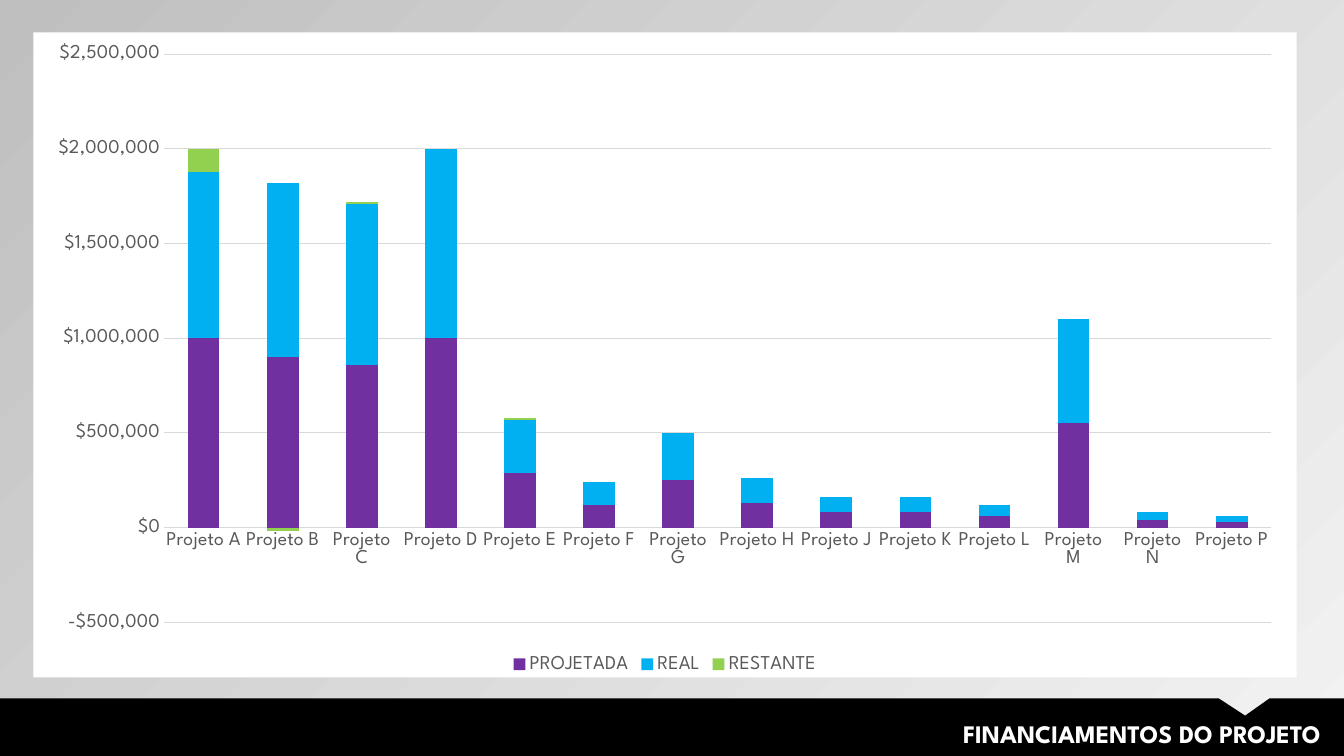
"""Build a slide with a stacked column chart of project funding."""
from dataclasses import dataclass

from lxml import etree
from pptx import Presentation
from pptx.chart.data import CategoryChartData
from pptx.dml.color import RGBColor
from pptx.enum.chart import XL_CHART_TYPE, XL_LEGEND_POSITION, XL_TICK_MARK
from pptx.enum.text import MSO_AUTO_SIZE, PP_ALIGN
from pptx.oxml import parse_xml
from pptx.oxml.ns import nsdecls, qn
from pptx.util import Inches, Pt

STACKED = XL_CHART_TYPE.COLUMN_STACKED
LEGEND_BOTTOM = XL_LEGEND_POSITION.BOTTOM
NO_TICK = XL_TICK_MARK.NONE
FIT_SHAPE = MSO_AUTO_SIZE.SHAPE_TO_FIT_TEXT
ALIGN_RIGHT = PP_ALIGN.RIGHT

BANNER_POINTS = [(0, 6.93), (12.09, 6.93), (12.35, 7.1), (12.59, 6.93),
                 (13.33, 6.93), (13.33, 7.5), (0, 7.5)]
PROJECTS = [f"Projeto {letter}" for letter in "ABCDEFGHJKLMNP"]
SMALL_PROJECTS = [120000, 250000, 130000, 80000, 80000, 60000, 550000, 40000, 30000]
FUNDING = {
    "PROJETADA": [1000000, 900000, 860000, 1000000, 290000] + SMALL_PROJECTS,
    "REAL": [880000, 920000, 850000, 1000000, 280000] + SMALL_PROJECTS,
    "RESTANTE": [120000, -20000, 10000, 0, 10000] + [0] * len(SMALL_PROJECTS),
}


@dataclass(frozen=True)
class Theme:
    """Colours, font and type sizes of the slide."""

    font: str = "League Spartan"
    title_size: int = 18
    chart_size: int = 14
    line_width: float = 0.75
    background: tuple = ("F2F2F2", "BFBFBF")
    banner: str = "000000"
    title: str = "FFFFFF"
    panel: str = "FFFFFF"
    label: str = "595959"
    line: str = "D9D9D9"
    series: tuple = ("7030A0", "00B0F0", "92D050")


def format_font(font, name, size, color, bold=False):
    """Apply a typeface, size, colour and weight to a font."""
    font.name = name
    font.size = Pt(size)
    font.bold = bold
    font.color.rgb = RGBColor.from_string(color)


def write_text(paragraph, text, align, **font_format):
    """Write one formatted run into a paragraph."""
    paragraph.alignment = align
    run = paragraph.add_run()
    run.text = text
    format_font(run.font, **font_format)


class SlideBuilder:
    """Draw themed elements on one slide."""

    def __init__(self, slide, theme):
        """Keep the slide and its theme."""
        self.slide = slide
        self.theme = theme

    def add_background(self):
        """Fill the background with a diagonal gradient."""
        fill = self.slide.background.fill
        fill.gradient()
        fill.gradient_angle = 135
        for stop, color, position in zip(fill.gradient_stops, self.theme.background, (0, 1)):
            stop.color.rgb = RGBColor.from_string(color)
            stop.position = position

    def add_banner(self, points):
        """Draw the notched band along the bottom."""
        corners = [(Inches(x), Inches(y)) for x, y in points]
        outline = self.slide.shapes.build_freeform(*corners[0])
        outline.add_line_segments(corners[1:], close=True)
        shape = outline.convert_to_shape()
        shape.shadow.inherit = False
        shape.fill.solid()
        shape.fill.fore_color.rgb = RGBColor.from_string(self.theme.banner)
        shape.line.fill.background()

    def add_title(self, text, left, top, width, height):
        """Place the right-aligned title."""
        box = self.slide.shapes.add_textbox(
            Inches(left), Inches(top), Inches(width), Inches(height))
        frame = box.text_frame
        frame.word_wrap = True
        frame.auto_size = FIT_SHAPE
        write_text(frame.paragraphs[0], text, ALIGN_RIGHT, name=self.theme.font,
                   size=self.theme.title_size, color=self.theme.title, bold=True)

    def add_funding_chart(self, categories, funding, left, top, width, height):
        """Place the stacked column chart on its white panel."""
        data = CategoryChartData(number_format='"$"#,##0')
        data.categories = categories
        for name, values in funding.items():
            data.add_series(name, values)
        chart = self.slide.shapes.add_chart(
            STACKED, Inches(left), Inches(top), Inches(width), Inches(height), data).chart
        self.format_label(chart.font)
        self.fill_panel(chart)
        chart.has_title = False
        chart.has_legend = True
        chart.legend.position = LEGEND_BOTTOM
        chart.legend.include_in_layout = False
        self.format_label(chart.legend.font)
        self.format_axes(chart)
        plot = chart.plots[0]
        plot.gap_width = 150
        plot.overlap = 100
        plot.vary_by_categories = False
        for series, color in zip(plot.series, self.theme.series):
            series.invert_if_negative = False
            series.format.fill.solid()
            series.format.fill.fore_color.rgb = RGBColor.from_string(color)

    def format_axes(self, chart):
        """Style both axes, the scale and the gridlines."""
        category_axis, value_axis = chart.category_axis, chart.value_axis
        for axis in (category_axis, value_axis):
            axis.major_tick_mark = NO_TICK
            axis.minor_tick_mark = NO_TICK
            self.format_label(axis.tick_labels.font)
        value_axis.minimum_scale = -500000
        value_axis.maximum_scale = 2500000
        value_axis.major_unit = 500000
        value_axis.tick_labels.number_format = '"$"#,##0'
        value_axis.tick_labels.number_format_is_linked = False
        value_axis.format.line.fill.background()
        value_axis.has_major_gridlines = True
        for line in (category_axis.format.line, value_axis.major_gridlines.format.line):
            line.color.rgb = RGBColor.from_string(self.theme.line)
            line.width = Pt(self.theme.line_width)

    def format_label(self, font):
        """Apply the chart label style to a font."""
        format_font(font, self.theme.font, self.theme.chart_size, self.theme.label)

    def fill_panel(self, chart):
        """Give the chart area a solid fill without an outline."""
        properties = parse_xml(f"<c:spPr {nsdecls('c', 'a')}/>")
        fill = etree.SubElement(properties, qn("a:solidFill"))
        etree.SubElement(fill, qn("a:srgbClr"), val=self.theme.panel)
        line = etree.SubElement(properties, qn("a:ln"))
        etree.SubElement(line, qn("a:noFill"))
        chart.element.find(qn("c:chart")).addnext(properties)


def main():
    """Create and save the presentation."""
    presentation = Presentation()
    presentation.slide_width = Inches(13.33)
    presentation.slide_height = Inches(7.5)
    slide = presentation.slides.add_slide(presentation.slide_layouts[6])
    builder = SlideBuilder(slide, Theme())
    builder.add_background()
    builder.add_banner(BANNER_POINTS)
    builder.add_title("FINANCIAMENTOS DO PROJETO", 4.14, 7.08, 9.06, 0.4)
    builder.add_funding_chart(PROJECTS, FUNDING, 0.33, 0.32, 12.53, 6.4)
    presentation.save("out.pptx")


if __name__ == "__main__":
    main()
